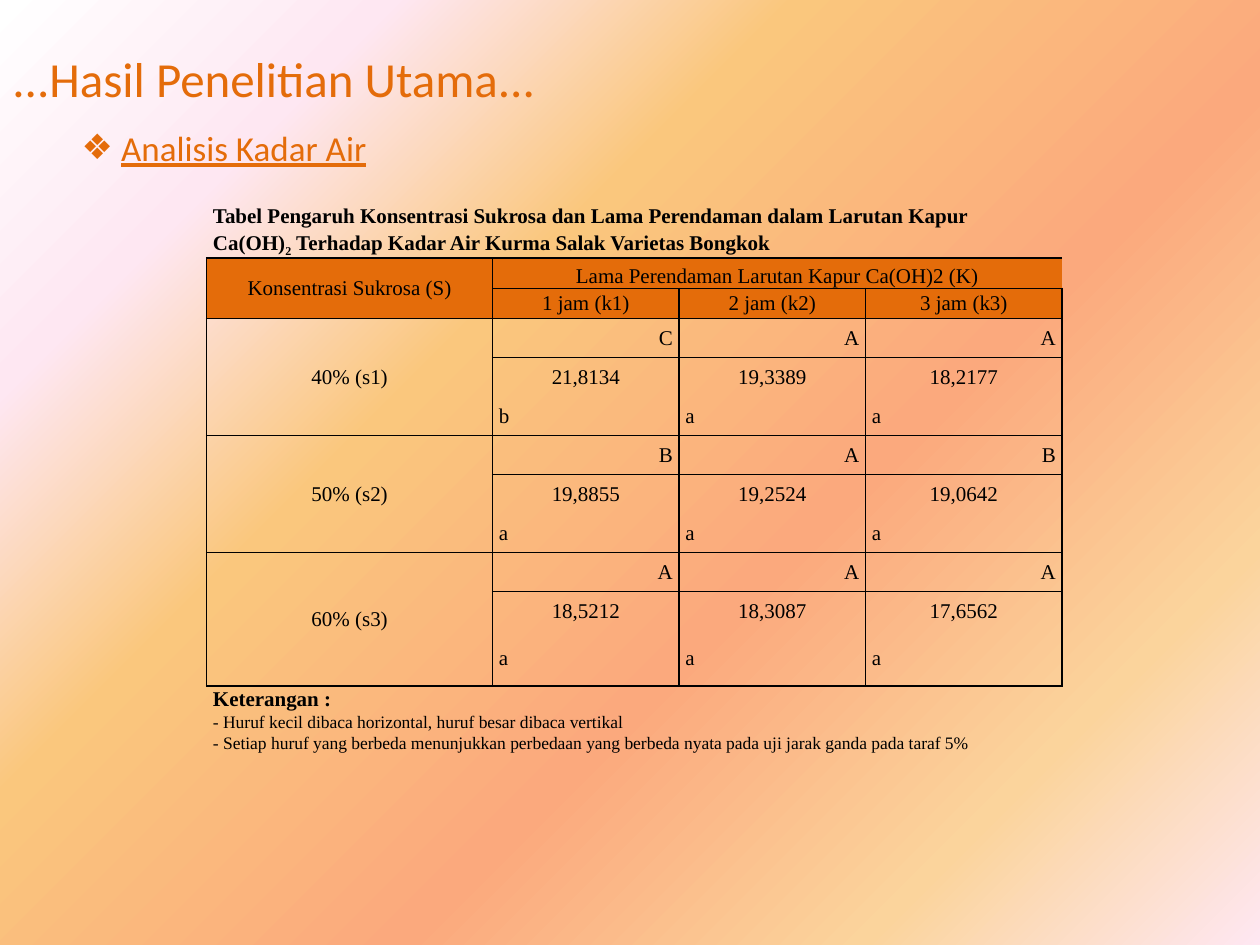
from dataclasses import dataclass
from typing import Any, NamedTuple

from lxml import etree
from pptx import Presentation
from pptx import util as u
from pptx.dml import color
from pptx.enum import text
from pptx.oxml import ns

ALIGN, ANCHOR = text.PP_ALIGN, text.MSO_ANCHOR


@dataclass(frozen=True)
class Theme:
    accent: str = "E46C0A"
    ink: str = "000000"
    heading_font: str = "Calibri"
    table_font: str = "Times New Roman"
    title: int = 28
    subtitle: int = 20
    body: int = 12
    note: int = 10
    line: float = 1
    gradient: tuple = ((0, "FFFFFF"), (18, "FEE7F2"), (36, "FAC77D"),
                       (61, "FBA97D"), (82, "FBD49C"), (100, "FEE7F2"))
    angle: int = 45
    plain_table: str = "{2D5ABB26-0587-4C30-8999-92F81FD0307C}"


class Area(NamedTuple):
    left: int
    top: int
    width: int
    height: int


class Span(NamedTuple):
    row: int
    col: int
    rows: int = 1
    cols: int = 1


class Piece(NamedTuple):
    words: str
    extra: dict = {}


@dataclass(frozen=True)
class Entry:
    span: Span
    pieces: tuple
    align: Any = ALIGN.CENTER
    anchor: Any = ANCHOR.MIDDLE
    framed: bool = False
    fill: str = ""
    size: int = 12
    bold: bool = False


class Level(NamedTuple):
    label: str
    columns_letters: str
    moisture: tuple
    rows_letters: str


THEME = Theme()
GRID_COLS, GRID_ROWS = 1000, 750
CELL = u.Inches(0.01)
COL_WIDTHS = (227, 148, 148, 156)
ROW_HEIGHTS = (18, 21, 24, 24) + (31,) * 8 + (44, 20, 15, 15)
LEVELS = (
    Level("40% (s1)", "CAA", ("21,8134", "19,3389", "18,2177"), "baa"),
    Level("50% (s2)", "BAB", ("19,8855", "19,2524", "19,0642"), "aaa"),
    Level("60% (s3)", "AAA", ("18,5212", "18,3087", "17,6562"), "aaa"),
)
CAPTION = (
    (Piece("Tabel Pengaruh Konsentrasi Sukrosa dan Lama Perendaman dalam Larutan Kapur"),),
    (Piece("Ca(OH)"), Piece("2", {"baseline": "-25000"}),
     Piece(" Terhadap Kadar Air Kurma Salak Varietas Bongkok")),
)
NOTES = (
    "- Huruf kecil dibaca horizontal, huruf besar dibaca vertikal",
    "- Setiap huruf yang berbeda menunjukkan perbedaan yang berbeda nyata "
    "pada uji jarak ganda pada taraf 5%",
)


def apply(target: Any, values: dict) -> None:
    for name, value in values.items():
        setattr(target, name, value)


def child(parent: Any, tag: str, **attributes: Any) -> Any:
    return etree.SubElement(parent, ns.qn(tag), {k: str(v) for k, v in attributes.items()})


def write(paragraph: Any, pieces: tuple, font: str, size: int, ink: str, bold: bool = False) -> None:
    for piece in pieces:
        run = paragraph.add_run()
        run.text = piece.words
        apply(run.font, {"name": font, "size": u.Pt(size), "bold": bold})
        run.font.color.rgb = color.RGBColor.from_string(ink)
        for name, value in piece.extra.items():
            run.font._element.set(name, value)


def paint_background(slide: Any) -> None:
    slide.background.fill.gradient()
    stops = next(slide.element.iter(ns.qn("a:gsLst")))
    for stop in list(stops):
        stops.remove(stop)
    for share, rgb in THEME.gradient:
        child(child(stops, "a:gs", pos=share * 1000), "a:srgbClr", val=rgb)
    direction = next(slide.element.iter(ns.qn("a:lin")))
    direction.set("ang", str(THEME.angle * 60000))
    direction.set("scaled", "0")


def add_heading(slide: Any, area: Area, pieces: tuple, size: int, bullet: str = "") -> None:
    frame = slide.shapes.add_textbox(*(CELL * part for part in area)).text_frame
    apply(frame, {"word_wrap": True, "vertical_anchor": ANCHOR.MIDDLE})
    paragraph = frame.paragraphs[0]
    write(paragraph, pieces, THEME.heading_font, size, THEME.accent)
    if bullet:
        layout = paragraph._p.get_or_add_pPr()
        hang = u.Inches(0.25)
        layout.set("marL", str(hang))
        layout.set("indent", str(-hang))
        child(layout, "a:buFont", typeface=THEME.heading_font)
        child(layout, "a:buChar", char=bullet)


def frame_cells(table: Any, span: Span) -> None:
    last_row, last_col = span.row + span.rows - 1, span.col + span.cols - 1
    for row in range(span.row, last_row + 1):
        for col in range(span.col, last_col + 1):
            sides = {"L": col == span.col, "R": col == last_col,
                     "T": row == span.row, "B": row == last_row}
            properties = table.cell(row, col)._tc.get_or_add_tcPr()
            for side in (name for name, outer in sides.items() if outer):
                line = child(properties, f"a:ln{side}", w=u.Pt(THEME.line))
                child(child(line, "a:solidFill"), "a:srgbClr", val=THEME.ink)


def place_entry(table: Any, entry: Entry) -> None:
    row, col, rows, cols = entry.span
    cell = table.cell(row, col)
    if rows * cols > 1:
        cell.merge(table.cell(row + rows - 1, col + cols - 1))
    if entry.framed:
        frame_cells(table, entry.span)
    cell.vertical_anchor = entry.anchor
    if entry.fill:
        cell.fill.solid()
        cell.fill.fore_color.rgb = color.RGBColor.from_string(entry.fill)
    else:
        cell.fill.background()
    paragraph = cell.text_frame.paragraphs[0]
    paragraph.alignment = entry.align
    write(paragraph, entry.pieces, THEME.table_font, entry.size, THEME.ink, entry.bold)


def table_entries() -> list[Entry]:
    wide = {"align": ALIGN.JUSTIFY, "anchor": ANCHOR.BOTTOM}
    header = {"framed": True, "fill": THEME.accent}
    entries = [Entry(Span(row, 0, cols=4), pieces, ALIGN.JUSTIFY,
                     (ANCHOR.MIDDLE, ANCHOR.BOTTOM)[row], bold=True)
               for row, pieces in enumerate(CAPTION)]
    entries += [
        Entry(Span(2, 0, rows=2), (Piece("Konsentrasi Sukrosa (S)"),), **header),
        Entry(Span(2, 1, cols=3), (Piece("Lama Perendaman Larutan Kapur Ca(OH)2 (K)"),),
              anchor=ANCHOR.BOTTOM, **header),
    ]
    entries += [Entry(Span(3, hour), (Piece(f"{hour} jam (k{hour})"),), **header)
                for hour in (1, 2, 3)]
    for index, level in enumerate(LEVELS):
        top = 4 + 3 * index
        entries.append(Entry(Span(top, 0, rows=3), (Piece(level.label),), framed=True))
        lines = ((level.columns_letters, ALIGN.RIGHT), (level.moisture, ALIGN.CENTER),
                 (level.rows_letters, ALIGN.JUSTIFY))
        entries += [Entry(Span(top + step, col), (Piece(words),), align)
                    for step, (values, align) in enumerate(lines)
                    for col, words in enumerate(values, 1)]
    entries.append(Entry(Span(13, 0, cols=2), (Piece("Keterangan :"),), bold=True, **wide))
    entries += [Entry(Span(row, 0, cols=4), (Piece(note),), size=THEME.note, **wide)
                for row, note in enumerate(NOTES, 14)]
    return entries


def add_moisture_table(slide: Any, left: int, top: int) -> None:
    area = Area(left, top, sum(COL_WIDTHS), sum(ROW_HEIGHTS))
    table = slide.shapes.add_table(len(ROW_HEIGHTS), len(COL_WIDTHS),
                                   *(CELL * part for part in area)).table
    apply(table, {"first_row": False, "horz_banding": False})
    next(table._tbl.iter(ns.qn("a:tableStyleId"))).text = THEME.plain_table
    for column, width in zip(table.columns, COL_WIDTHS):
        column.width = CELL * width
    for row, height in zip(table.rows, ROW_HEIGHTS):
        row.height = CELL * height
    margins = {"margin_left": CELL * 5, "margin_right": CELL * 5,
               "margin_top": 0, "margin_bottom": 0}
    for cell in table.iter_cells():
        apply(cell, margins)
        child(cell.text_frame.paragraphs[0]._p, "a:endParaRPr", sz=THEME.note * 100)
    for index in range(len(LEVELS)):
        for col in (1, 2, 3):
            frame_cells(table, Span(4 + 3 * index, col, rows=3))
    for entry in table_entries():
        place_entry(table, entry)


def main() -> None:
    deck = Presentation()
    apply(deck, {"slide_width": CELL * GRID_COLS, "slide_height": CELL * GRID_ROWS})
    slide = deck.slides.add_slide(deck.slide_layouts[6])
    paint_background(slide)
    add_heading(slide, Area(0, 31, 850, 62), (Piece("...Hasil Penelitian Utama..."),), THEME.title)
    add_moisture_table(slide, 164, 162)
    add_heading(slide, Area(55, 86, 850, 62),
                (Piece(" "), Piece("Analisis Kadar Air", {"u": "sng"})), THEME.subtitle, "❖")
    deck.save("out.pptx")


if __name__ == "__main__":
    main()
